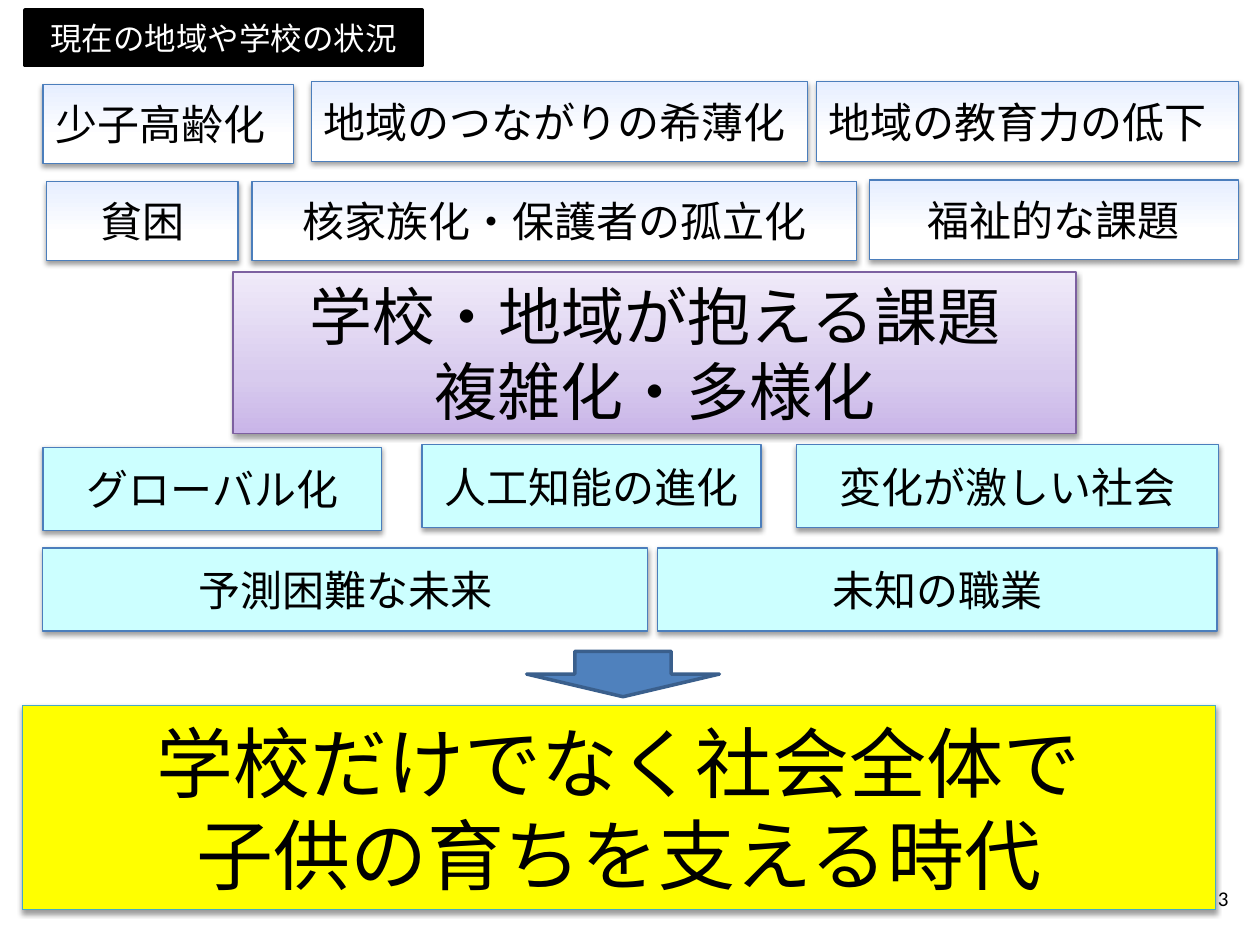
from dataclasses import dataclass

from lxml.etree import SubElement
from pptx import Presentation
from pptx.dml.color import RGBColor
from pptx.enum.shapes import MSO_SHAPE as Preset
from pptx.enum.text import MSO_ANCHOR as Anchor, MSO_AUTO_SIZE as AutoSize, PP_ALIGN as Align
from pptx.oxml import parse_xml
from pptx.oxml.ns import nsdecls, qn
from pptx.util import Inches, Pt

COLORS = {
    "black": "000000", "white": "FFFFFF", "yellow": "FFFF00", "cyan": "CCFFFF",
    "pale_blue": "E6EEFF", "blue": "4F81BD", "blue_line": "4B7EBC",
    "arrow_line": "3A5F8C", "teal_line": "46AAC5", "purple_line": "7D60A0",
    "purple": "C9B5E8", "light_purple": "D8CBEE", "pale_purple": "F0EAF9",
}
# Gradient stops at 0, 35 and 100 percent, from bottom to top
WHITE_TO_BLUE = ("white", "white", "pale_blue")
PURPLES = ("purple", "light_purple", "pale_purple")
JAPANESE = "Noto Sans CJK JP"
LATIN = "Calibri"


@dataclass
class Box:
    text: str
    left: float
    top: float
    width: float
    height: float
    fill: str | tuple[str, ...]
    line: str = "blue_line"
    size: int = 24
    align: Align = Align.CENTER


@dataclass
class Row:
    """Boxes that share a height and a fill, as (text, left, top, width)."""
    height: float
    fill: str | tuple[str, ...]
    items: list[tuple[str, float, float, float]]
    align: Align = Align.CENTER


CONCLUSION = Box("学校だけでなく社会全体で\n子供の育ちを支える時代",
                 0.18, 5.6, 9.47, 1.62, "yellow", "teal_line", 44)
CHALLENGE = Box("学校・地域が抱える課題\n複雑化・多様化",
                1.85, 2.16, 6.69, 1.28, PURPLES, "purple_line", 36)
ROWS = [
    Row(0.63, WHITE_TO_BLUE, [("少子高齢化", 0.34, 0.67, 1.99),
                              ("地域のつながりの希薄化", 2.47, 0.65, 3.94),
                              ("地域の教育力の低下", 6.48, 0.65, 3.35)], Align.LEFT),
    Row(0.63, WHITE_TO_BLUE, [("貧困", 0.37, 1.44, 1.52),
                              ("核家族化・保護者の孤立化", 2, 1.44, 4.8),
                              ("福祉的な課題", 6.9, 1.43, 2.93)]),
    Row(0.66, "cyan", [("グローバル化", 0.34, 3.55, 2.69),
                       ("人工知能の進化", 3.35, 3.53, 2.69),
                       ("変化が激しい社会", 6.32, 3.53, 3.35)]),
    Row(0.66, "cyan", [("予測困難な未来", 0.34, 4.35, 4.8),
                       ("未知の職業", 5.22, 4.35, 4.44)]),
]


def rgb(name: str) -> RGBColor:
    return RGBColor.from_string(COLORS[name])


def set_text(shape, text: str, size: int, font: str, color: str = "black",
             align: Align = Align.CENTER) -> None:
    frame = shape.text_frame
    frame.text = text
    frame.word_wrap = True
    frame.auto_size = AutoSize.NONE
    frame.vertical_anchor = Anchor.MIDDLE
    for paragraph in frame.paragraphs:
        paragraph.alignment = align
        for run in paragraph.runs:
            run.font.size = Pt(size)
            run.font.name = font
            run.font.color.rgb = rgb(color)
            east_asian = SubElement(run.font._element, qn("a:ea"))
            east_asian.set("typeface", JAPANESE)


def set_outline(shape, fill: str, line: str, width: float) -> None:
    shape.fill.solid()
    shape.fill.fore_color.rgb = rgb(fill)
    shape.line.color.rgb = rgb(line)
    shape.line.width = Pt(width)


def set_gradient(shape, names: tuple[str, ...]) -> None:
    """Replace the solid fill with a gradient that runs upwards."""
    stops = "".join(
        f'<a:gs pos="{position}"><a:srgbClr val="{COLORS[name]}"/></a:gs>'
        for position, name in zip((0, 35000, 100000), names))
    gradient = parse_xml(
        f'<a:gradFill {nsdecls("a")} rotWithShape="1"><a:gsLst>{stops}</a:gsLst>'
        '<a:lin ang="16200000" scaled="1"/></a:gradFill>')
    properties = shape._element.spPr
    properties.replace(properties.find(qn("a:solidFill")), gradient)


def set_drop_shadow(shape) -> None:
    shape.shadow.inherit = False
    effects = shape._element.spPr.find(qn("a:effectLst"))
    effects.append(parse_xml(
        f'<a:outerShdw {nsdecls("a")} blurRad="{Pt(3.1)}" dist="{Pt(1.6)}" '
        'dir="5400000" rotWithShape="0"><a:srgbClr val="000000">'
        '<a:alpha val="38000"/></a:srgbClr></a:outerShdw>'))


def add_box(slide, box: Box) -> None:
    shape = slide.shapes.add_shape(
        Preset.RECTANGLE, Inches(box.left), Inches(box.top),
        Inches(box.width), Inches(box.height))
    gradient = isinstance(box.fill, tuple)
    set_outline(shape, box.fill[0] if gradient else box.fill, box.line, 0.75)
    if gradient:
        set_gradient(shape, box.fill)
    set_drop_shadow(shape)
    set_text(shape, box.text, box.size, JAPANESE, align=box.align)


def add_row(slide, row: Row) -> None:
    for text, left, top, width in row.items:
        add_box(slide, Box(text, left, top, width, row.height, row.fill, align=row.align))


def add_arrow(slide) -> None:
    arrow = slide.shapes.add_shape(
        Preset.DOWN_ARROW, Inches(4.18), Inches(5.17), Inches(1.53), Inches(0.36))
    arrow.shadow.inherit = False
    set_outline(arrow, "blue", "arrow_line", 2)


def format_title(title) -> None:
    """Turn the title placeholder into a black rounded label."""
    title.left, title.top = Inches(0.2), Inches(0.08)
    title.width, title.height = Inches(3.15), Inches(0.44)
    title._element.spPr.append(parse_xml(
        f'<a:prstGeom {nsdecls("a")} prst="roundRect"><a:avLst/></a:prstGeom>'))
    set_outline(title, "black", "black", 2)
    set_text(title, "現在の地域や学校の状況", 18, LATIN, "white")


def add_page_number(slide) -> None:
    number = slide.shapes.add_textbox(Inches(7.52), Inches(6.93), Inches(2.33), Inches(0.4))
    set_text(number, "3", 12, LATIN, align=Align.RIGHT)


def main() -> None:
    presentation = Presentation()
    presentation.slide_width, presentation.slide_height = Inches(10), Inches(7.5)
    title_only = presentation.slide_layouts[5]
    slide = presentation.slides.add_slide(title_only)
    format_title(slide.shapes.title)
    add_box(slide, CONCLUSION)
    add_arrow(slide)
    add_box(slide, CHALLENGE)
    for row in ROWS:
        add_row(slide, row)
    add_page_number(slide)
    presentation.save("out.pptx")


if __name__ == "__main__":
    main()
